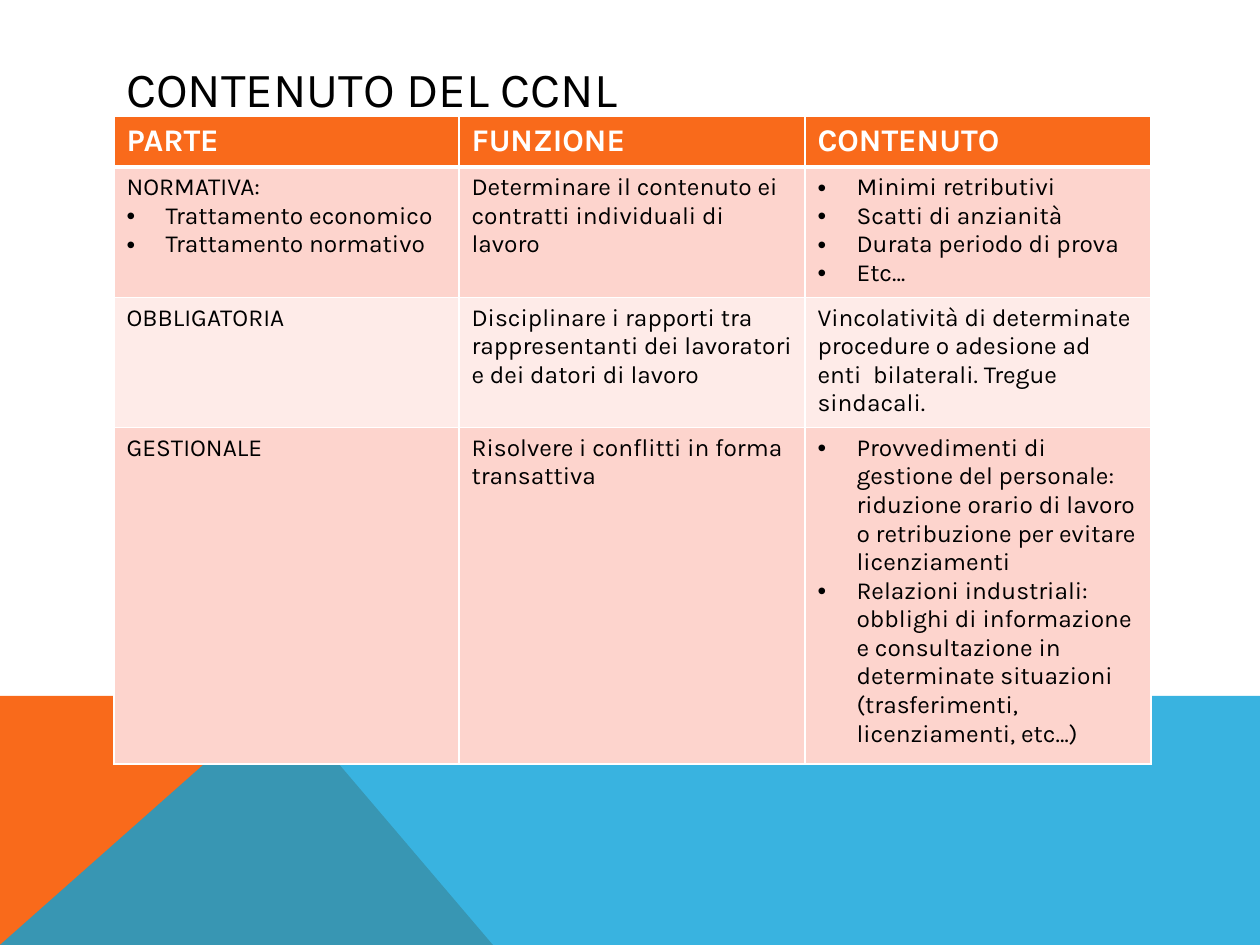
from lxml.etree import SubElement
from pptx import Presentation
from pptx.dml.color import RGBColor
from pptx.enum.text import MSO_ANCHOR
from pptx.oxml import parse_xml
from pptx.oxml.ns import nsdecls, qn
from pptx.util import Emu, Pt

PX = 914400 // 126
FONT = "Karla"
WHITE, BLACK, ORANGE = "FFFFFF", "000000", "F96A1B"
DARK, LIGHT = "FDD4CD", "FEEBE8"
COLS = [345, 346, 346]
ROWS = [
    (51, ORANGE, ["PARTE", "FUNZIONE", "CONTENUTO"]),
    (127, DARK, [
        "NORMATIVA:\n• Trattamento economico\n• Trattamento normativo",
        "Determinare il contenuto ei contratti individuali di lavoro",
        "• Minimi retributivi\n• Scatti di anzianità\n• Durata periodo di prova\n• Etc…",
    ]),
    (127, LIGHT, [
        "OBBLIGATORIA",
        "Disciplinare i rapporti tra rappresentanti dei lavoratori e dei datori di lavoro",
        "Vincolatività di determinate procedure o adesione ad enti  bilaterali. "
        "Tregue sindacali.",
    ]),
    (326, DARK, [
        "GESTIONALE",
        "Risolvere i conflitti in forma transattiva",
        "• Provvedimenti di gestione del personale: riduzione orario di lavoro "
        "o retribuzione per evitare licenziamenti\n"
        "• Relazioni industriali: obblighi di informazione e consultazione in "
        "determinate situazioni (trasferimenti, licenziamenti, etc…)",
    ]),
]


def px(num):
    """Turn pixels into EMU."""
    return Emu(num * PX)


def paint(fill, color):
    """Apply a solid fill from a hex string."""
    fill.solid()
    fill.fore_color.rgb = RGBColor.from_string(color)


def style(para, size, color, bold=False):
    """Set the font of a paragraph."""
    font = para.font
    font.name, font.size, font.bold = FONT, Pt(size), bold
    font.color.rgb = RGBColor.from_string(color)


def add_poly(slide, points, color, alpha=None):
    """Draw a filled outline, with optional opacity in percent."""
    pen = slide.shapes.build_freeform(*points[0], scale=PX)
    pen.add_line_segments(points[1:], close=True)
    shape = pen.convert_to_shape()
    shape.shadow.inherit = False
    shape.line.fill.background()
    paint(shape.fill, color)
    if alpha:
        tone = shape.fill._xPr.find(".//" + qn("a:srgbClr"))
        SubElement(tone, qn("a:alpha"), val=str(alpha * 1000))


def add_title(slide, text):
    """Write the slide title."""
    frame = slide.shapes.add_textbox(px(114), px(50), px(1036), px(76)).text_frame
    frame.word_wrap = True
    frame.vertical_anchor = MSO_ANCHOR.MIDDLE
    frame.text = text
    style(frame.paragraphs[0], 28, BLACK)


def add_bullet(para):
    """Give a paragraph a hanging bullet."""
    props = para._p.get_or_add_pPr()
    props.set("marL", str(px(39)))
    props.set("indent", str(-px(39)))
    props.append(parse_xml(f'<a:buFont {nsdecls("a")} typeface="Arial"/>'))
    props.append(parse_xml(f'<a:buChar {nsdecls("a")} char="•"/>'))


def add_border(cell, base):
    """Rule a cell in white with a given base width in points."""
    props = cell._tc.get_or_add_tcPr()
    widths = {"lnL": 1, "lnR": 1, "lnT": 1, "lnB": base}
    for spot, (side, width) in enumerate(widths.items()):
        props.insert(spot, parse_xml(
            f'<a:{side} {nsdecls("a")} w="{Pt(width)}"><a:solidFill>'
            f'<a:srgbClr val="{WHITE}"/></a:solidFill></a:{side}>'))


def fill_cell(cell, text, color, head):
    """Fill a cell with styled lines, bulleted where marked."""
    paint(cell.fill, color)
    add_border(cell, 3 if head else 1)
    lines = text.split("\n")
    cell.text = "\n".join(line.removeprefix("• ") for line in lines)
    for line, para in zip(lines, cell.text_frame.paragraphs):
        if head:
            style(para, 18, WHITE, True)
        else:
            style(para, 14, BLACK)
        if line.startswith("• "):
            add_bullet(para)


def add_grid(slide):
    """Build the table of contract parts."""
    high = sum(row[0] for row in ROWS)
    table = slide.shapes.add_table(
        len(ROWS), len(COLS), px(114), px(116), px(sum(COLS)), px(high)).table
    for col, width in zip(table.columns, COLS):
        col.width = px(width)
    for num, (height, color, texts) in enumerate(ROWS):
        table.rows[num].height = px(height)
        for cell, text in zip(table.rows[num].cells, texts):
            fill_cell(cell, text, color, num == 0)


def main():
    """Build and save the slide."""
    deck = Presentation()
    deck.slide_width, deck.slide_height = px(1260), px(945)
    slide = deck.slides.add_slide(deck.slide_layouts[6])
    paint(slide.background.fill, WHITE)
    add_poly(slide, [(0, 945), (0, 696), (281, 696), (493, 945)], ORANGE)
    add_poly(slide, [(0, 945), (281, 696), (1260, 696), (1260, 945)], "08A1D9", 80)
    add_title(slide, "CONTENUTO DEL CCNL")
    add_grid(slide)
    deck.save("out.pptx")


if __name__ == "__main__":
    main()
